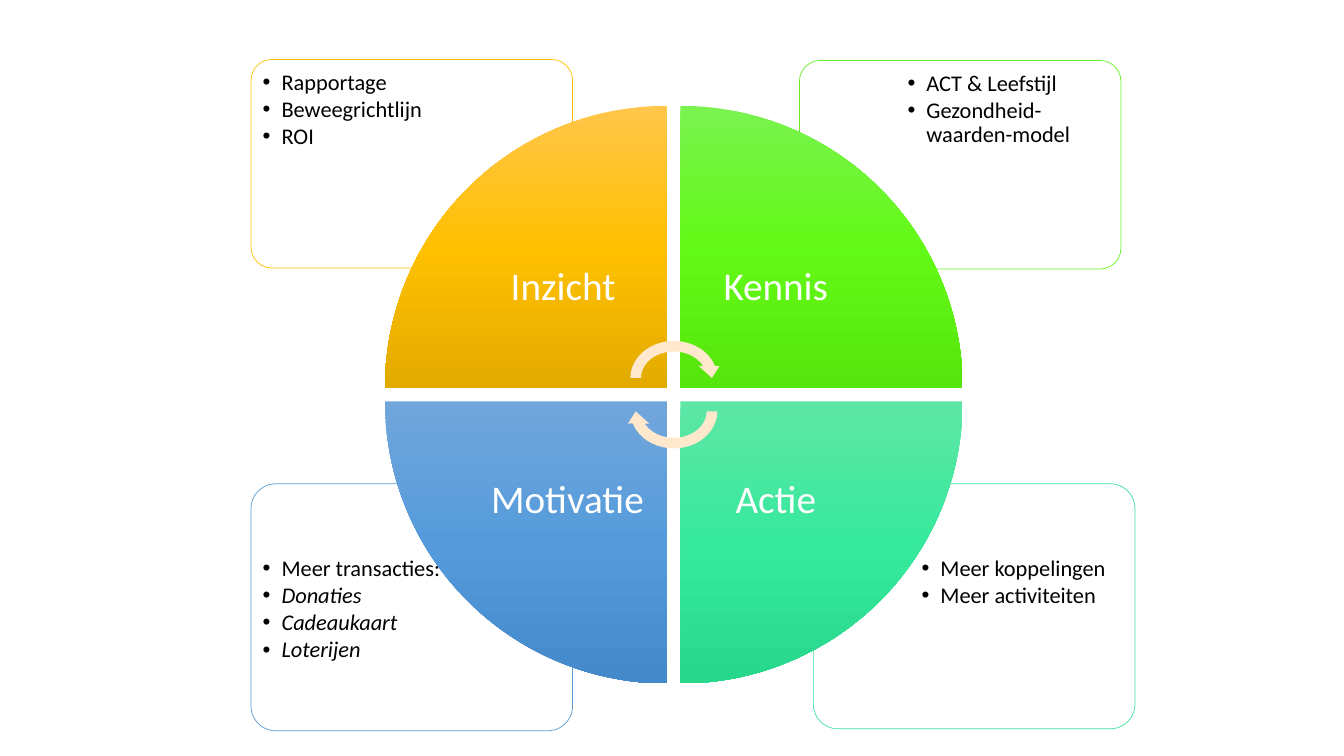
from lxml.etree import SubElement
from pptx import Presentation
from pptx.dml.color import RGBColor
from pptx.enum.shapes import MSO_SHAPE as Shape
from pptx.enum.text import MSO_ANCHOR as Anchor, PP_ALIGN as Align
from pptx.oxml import parse_xml
from pptx.oxml.ns import nsdecls, qn
from pptx.util import Pt

COLORS = {"text": "000000", "label": "FFFFFF", "card": "FFFFFF", "arrow": "FFE8CC"}
GRADIENTS = {
    "insight": ("FFC64B", "FFC000", "E3AB00"),
    "knowledge": ("7AF350", "63F916", "56E50C"),
    "action": ("5EE6A6", "37E99C", "27D88C"),
    "motivation": ("71A6DB", "559BDB", "448ACA"),
}
OUTLINES = {"insight": "FFC000", "knowledge": "67EF21",
            "action": "3FE19B", "motivation": "5B9BD5"}

# theme, column, row, label, card box, bullets as (wording, italic)
QUADRANTS = [
    ("action", 1, 1, "Actie ", (581, 345.6, 229.7, 175),
     [("Meer koppelingen", False), ("Meer activiteiten", False)]),
    ("motivation", 0, 1, "Motivatie ", (179.3, 345.6, 229.7, 176.4),
     [("Meer transacties:", False), ("Donaties", True),
      ("Cadeaukaart", True), ("Loterijen", True)]),
    ("knowledge", 1, 0, "Kennis ", (571, 43.2, 229.7, 149),
     [("ACT & Leefstijl", False), ("Gezondheid-waarden-model", False)]),
    ("insight", 0, 0, "Inzicht ", (179.3, 42.5, 229.7, 149),
     [("Rapportage", False), ("Beweegrichtlijn", False), ("ROI", False)]),
]
ROTATIONS = {(0, 0): 0, (1, 0): 90, (1, 1): 180, (0, 1): 270}

WHEEL = (275, 75.6, 412.6)
WHEEL_GAP = 9.4
LABEL_SIZE = 142.6
CARD_PAD = 3.6
BULLET_INDENT = 13.5


def rgb(name):
    return RGBColor.from_string(COLORS.get(name, name))


def apply_format(target, formats):
    for attribute, value in formats.items():
        setattr(target, attribute, value)


def add_preset(slide, preset, box, rotation=0):
    preset_shape = slide.shapes.add_shape(preset, *map(Pt, box))
    preset_shape.shadow.inherit = False
    preset_shape.rotation = rotation
    preset_shape.line.fill.background()
    return preset_shape


def add_text_frame(slide, box, inset, anchor):
    frame = slide.shapes.add_textbox(*map(Pt, box)).text_frame
    margins = {f"margin_{side}": Pt(inset) for side in ("left", "top", "right", "bottom")}
    apply_format(frame, {"word_wrap": True, "vertical_anchor": anchor, **margins})
    return frame


def write_paragraph(paragraph, wording, size, color, italic=False, **layout):
    apply_format(paragraph, {"line_spacing": 0.9, **layout})
    run = paragraph.add_run()
    run.text = wording
    apply_format(run.font, {"name": "Calibri", "size": Pt(size), "italic": italic})
    run.font.color.rgb = rgb(color)


def add_bullet(paragraph):
    properties = paragraph._p.get_or_add_pPr()
    properties.set("marL", str(Pt(BULLET_INDENT)))
    properties.set("indent", str(-Pt(BULLET_INDENT)))
    SubElement(properties, qn("a:buFont")).set("typeface", "Arial")
    SubElement(properties, qn("a:buChar")).set("char", "•")


def add_card(slide, box, outline, column, row, bullets):
    """Outlined card whose bullets keep to its outer corner, clear of the wheel."""
    left, top, width, height = box
    card = add_preset(slide, Shape.ROUNDED_RECTANGLE, box)
    card.adjustments[0] = 0.1
    card.fill.solid()
    card.fill.fore_color.rgb = rgb("card")
    white = card._element.spPr.find(qn("a:solidFill"))[0]
    SubElement(white, qn("a:alpha")).set("val", "90000")
    card.line.color.rgb = rgb(outline)
    card.line.width = Pt(0.5)

    text_box = (left + column * 0.3 * width + CARD_PAD,
                top + row * 0.25 * height + CARD_PAD,
                0.7 * width - 2 * CARD_PAD,
                0.75 * height - 2 * CARD_PAD)
    frame = add_text_frame(slide, text_box, 4.8, Anchor.TOP)
    for index, (wording, italic) in enumerate(bullets):
        paragraph = frame.add_paragraph() if index else frame.paragraphs[0]
        add_bullet(paragraph)
        write_paragraph(paragraph, wording, 16, "text", italic, space_after=Pt(2.1))


def fill_downwards(wedge, stops):
    """Vertical three-stop gradient that stays upright when the wedge turns."""
    stop_list = "".join(
        f'<a:gs pos="{index * 50000}"><a:srgbClr val="{color}"/></a:gs>'
        for index, color in enumerate(stops))
    gradient = parse_xml(
        f'<a:gradFill {nsdecls("a")} rotWithShape="0"><a:gsLst>{stop_list}</a:gsLst>'
        '<a:lin ang="5400000" scaled="0"/></a:gradFill>')
    wedge._element.spPr.find(qn("a:prstGeom")).addnext(gradient)


def add_wedge(slide, wheel, column, row, stops, label):
    left, top, diameter = wheel
    size = (diameter - WHEEL_GAP) / 2
    x = left + column * (size + WHEEL_GAP)
    y = top + row * (size + WHEEL_GAP)
    wedge = add_preset(slide, Shape.PIE_WEDGE, (x, y, size, size), ROTATIONS[column, row])
    fill_downwards(wedge, stops)

    margin = size - LABEL_SIZE
    label_box = (x + (1 - column) * margin, y + (1 - row) * margin, LABEL_SIZE, LABEL_SIZE)
    frame = add_text_frame(slide, label_box, 15.8, Anchor.MIDDLE)
    write_paragraph(frame.paragraphs[0], label, 28, "label", alignment=Align.CENTER)


def add_cycle_arrows(slide, wheel):
    left, top, diameter = wheel
    width, height, offset = 69.6, 60.5, 11.9
    x = left + (diameter - width) / 2
    middle = top + (diameter - height) / 2
    for y, rotation in ((middle - offset, 0), (middle + offset, 180)):
        arrow = add_preset(slide, Shape.CIRCULAR_ARROW, (x, y, width, height), rotation)
        arrow.fill.solid()
        arrow.fill.fore_color.rgb = rgb("arrow")


def main():
    deck = Presentation()
    deck.slide_width, deck.slide_height = Pt(960), Pt(540)
    slide = deck.slides.add_slide(deck.slide_layouts[6])
    for theme, column, row, _, box, bullets in QUADRANTS:
        add_card(slide, box, OUTLINES[theme], column, row, bullets)
    for theme, column, row, label, _, _ in QUADRANTS:
        add_wedge(slide, WHEEL, column, row, GRADIENTS[theme], label)
    add_cycle_arrows(slide, WHEEL)
    deck.save("out.pptx")


if __name__ == "__main__":
    main()
